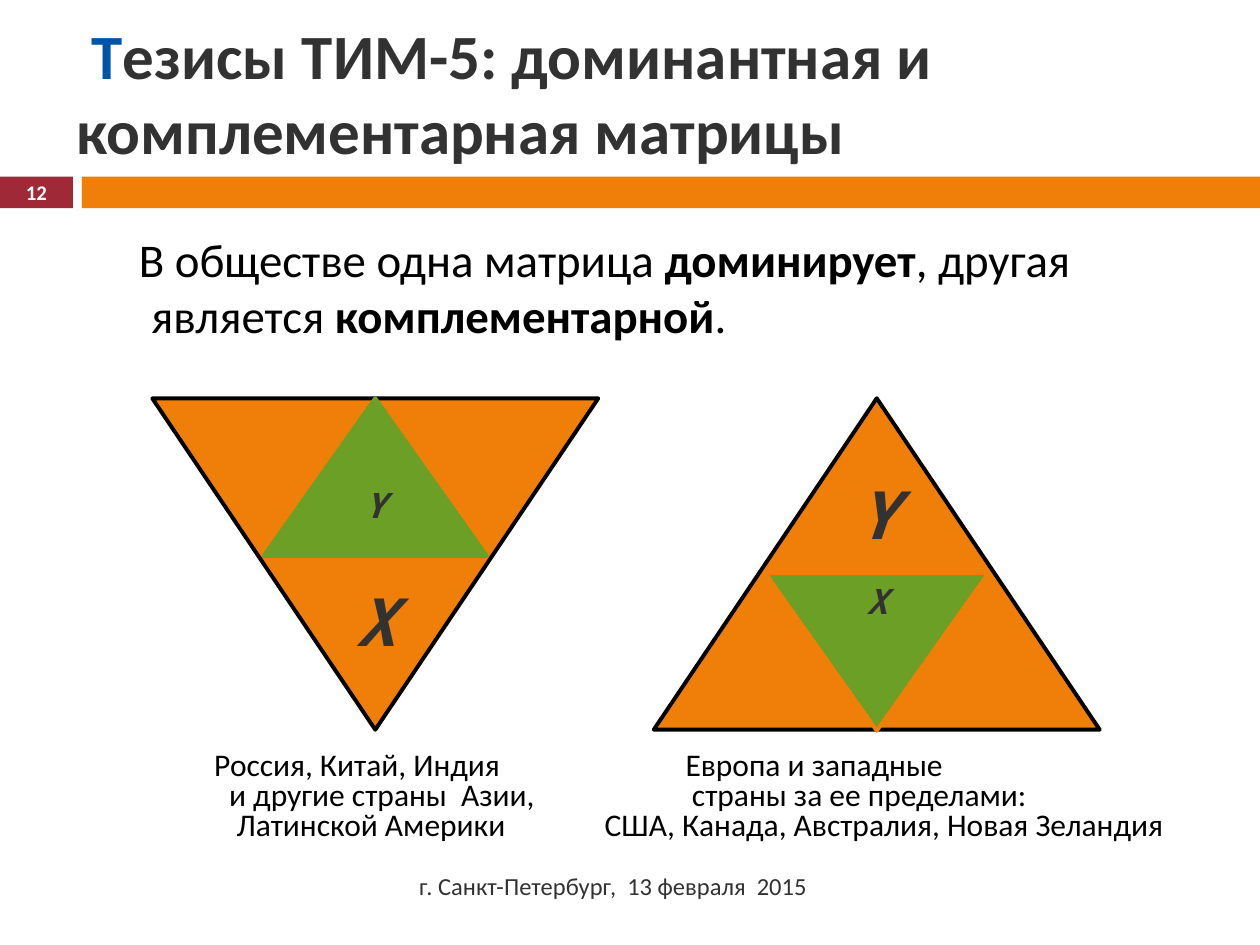
"""Build the slide on dominant and complementary matrices."""
from pptx import Presentation
from pptx.dml.color import RGBColor
from pptx.enum.shapes import MSO_SHAPE
from pptx.enum.text import MSO_ANCHOR, PP_ALIGN
from pptx.util import Cm, Pt

RECTANGLE = MSO_SHAPE.RECTANGLE
TRIANGLE = MSO_SHAPE.ISOSCELES_TRIANGLE
TOP, MIDDLE = MSO_ANCHOR.TOP, MSO_ANCHOR.MIDDLE
LEFT, CENTER, RIGHT = PP_ALIGN.LEFT, PP_ALIGN.CENTER, PP_ALIGN.RIGHT

ORANGE, GREEN, CRIMSON = "F07F09", "6B9F25", "9F2936"
BLUE, GRAY, BLACK, WHITE = "0054A8", "323232", "000000", "FFFFFF"
TEXT_FONT, LETTER_FONT = "Calibri", "Noto Sans Mono"

TITLE = [("Т", True, BLUE), ("езисы ТИМ-5: доминантная и комплементарная матрицы", True, GRAY)]
STATEMENT = [
    ("В обществе одна матрица ", False, BLACK),
    ("доминирует", True, BLACK),
    (", другая является ", False, BLACK),
    ("комплементарной", True, BLACK),
    (".", False, BLACK),
]
FOOTER = [("г. Санкт-Петербург,  13 февраля  2015", False, GRAY)]
SLIDE_NUMBER = [("12", True, WHITE)]

MATRICES = [
    {"left": 3.07, "rotation": 180, "dominant": "X", "complementary": "Y",
     "letter_top": 11.56, "inner_top": 8.03, "inner_line": GREEN},
    {"left": 13.18, "rotation": 0, "dominant": "Y", "complementary": "X",
     "letter_top": 9.42, "inner_top": 11.55, "inner_line": ORANGE},
]
MATRIX_TOP, MATRIX_WIDTH, MATRIX_HEIGHT = 8.03, 8.99, 6.68
INNER_WIDTH, INNER_HEIGHT = 4.5, 3.18
LETTER_WIDTH, LETTER_HEIGHT = 1.5, 1.75

CAPTIONS = [
    (4.05, 7.2, [("Россия, Китай, Индия", 0), ("и другие страны  Азии,", 0.3),
                 ("Латинской Америки", 0.45)]),
    (11.92, 12.6, [("Европа и западные", 1.63), ("страны за ее пределами:", 1.76),
                   ("США, Канада, Австралия, Новая Зеландия", 0)]),
]


def color(value):
    return RGBColor.from_string(value)


def add_runs(paragraph, runs, size, font=TEXT_FONT, italic=False):
    for text, bold, value in runs:
        run = paragraph.add_run()
        run.text = text
        run.font.name = font
        run.font.size = Pt(size)
        run.font.bold = bold
        run.font.italic = italic
        run.font.color.rgb = color(value)


def set_indent(paragraph, margin, first_line=0):
    properties = paragraph._p.get_or_add_pPr()
    properties.set("marL", str(Cm(margin)))
    properties.set("indent", str(Cm(first_line)))


def add_shape(slide, kind, box, fill, line=None):
    shape = slide.shapes.add_shape(kind, *map(Cm, box))
    shape.shadow.inherit = False
    shape.fill.solid()
    shape.fill.fore_color.rgb = color(fill)
    if line:
        shape.line.color.rgb = color(line)
        shape.line.width = Pt(2.25)
    else:
        shape.line.fill.background()
    return shape


def write_letter(shape, letter, size):
    frame = shape.text_frame
    frame.vertical_anchor = TOP
    paragraph = frame.paragraphs[0]
    paragraph.alignment = CENTER
    add_runs(paragraph, [(letter, True, GRAY)], size, LETTER_FONT, True)


def add_text(slide, box, anchor=TOP):
    frame = slide.shapes.add_textbox(*map(Cm, box)).text_frame
    frame.word_wrap = True
    frame.vertical_anchor = anchor
    return frame


def add_matrix(slide, matrix):
    left, rotation = matrix["left"], matrix["rotation"]
    middle = left + MATRIX_WIDTH / 2
    outer = add_shape(slide, TRIANGLE, (left, MATRIX_TOP, MATRIX_WIDTH, MATRIX_HEIGHT),
                      ORANGE, BLACK)
    outer.rotation = rotation
    inner = add_shape(slide, TRIANGLE, (middle - INNER_WIDTH / 2, matrix["inner_top"],
                                        INNER_WIDTH, INNER_HEIGHT),
                      GREEN, matrix["inner_line"])
    inner.rotation = 180 - rotation
    if inner.rotation:
        inner.text_frame._txBody.bodyPr.set("rot", "10800000")
    write_letter(inner, matrix["complementary"], 20)
    square = add_shape(slide, RECTANGLE, (middle - LETTER_WIDTH / 2, matrix["letter_top"],
                                          LETTER_WIDTH, LETTER_HEIGHT), ORANGE, ORANGE)
    square.text_frame.margin_left = square.text_frame.margin_right = Cm(0.2)
    write_letter(square, matrix["dominant"], 38)


def add_caption(slide, left, width, lines):
    frame = add_text(slide, (left + 0.02, 15.04, width, 2.11))
    for index, (text, margin) in enumerate(lines):
        paragraph = frame.add_paragraph() if index else frame.paragraphs[0]
        paragraph.alignment = LEFT
        paragraph.line_spacing = 0.8
        set_indent(paragraph, margin)
        add_runs(paragraph, [(text, False, BLACK)], 18)


def main():
    presentation = Presentation()
    presentation.slide_width, presentation.slide_height = Cm(25.4), Cm(19.05)
    slide = presentation.slides.add_slide(presentation.slide_layouts[6])

    number = add_shape(slide, RECTANGLE, (0, 3.56, 1.47, 0.64), CRIMSON)
    number.text_frame.margin_top = number.text_frame.margin_bottom = 0
    number.text_frame.vertical_anchor = MIDDLE
    number.text_frame.paragraphs[0].alignment = CENTER
    add_runs(number.text_frame.paragraphs[0], SLIDE_NUMBER, 11.9)
    add_shape(slide, RECTANGLE, (1.65, 3.56, 23.75, 0.64), ORANGE)

    title = add_text(slide, (1.3, 0.53, 23.29, 2.64), MIDDLE).paragraphs[0]
    set_indent(title, 0, 0.3)
    add_runs(title, TITLE, 36)

    statement = add_text(slide, (1.91, 4.52, 22, 2.39)).paragraphs[0]
    statement.space_before = Pt(7)
    set_indent(statement, 0.89, -0.25)
    add_runs(statement, STATEMENT, 26.8)

    for matrix in MATRICES:
        add_matrix(slide, matrix)
    for caption in CAPTIONS:
        add_caption(slide, *caption)

    footer = add_text(slide, (1.7, 17.35, 14.82, 1.02), MIDDLE).paragraphs[0]
    footer.alignment = RIGHT
    add_runs(footer, FOOTER, 14)

    presentation.save("out.pptx")


if __name__ == "__main__":
    main()
